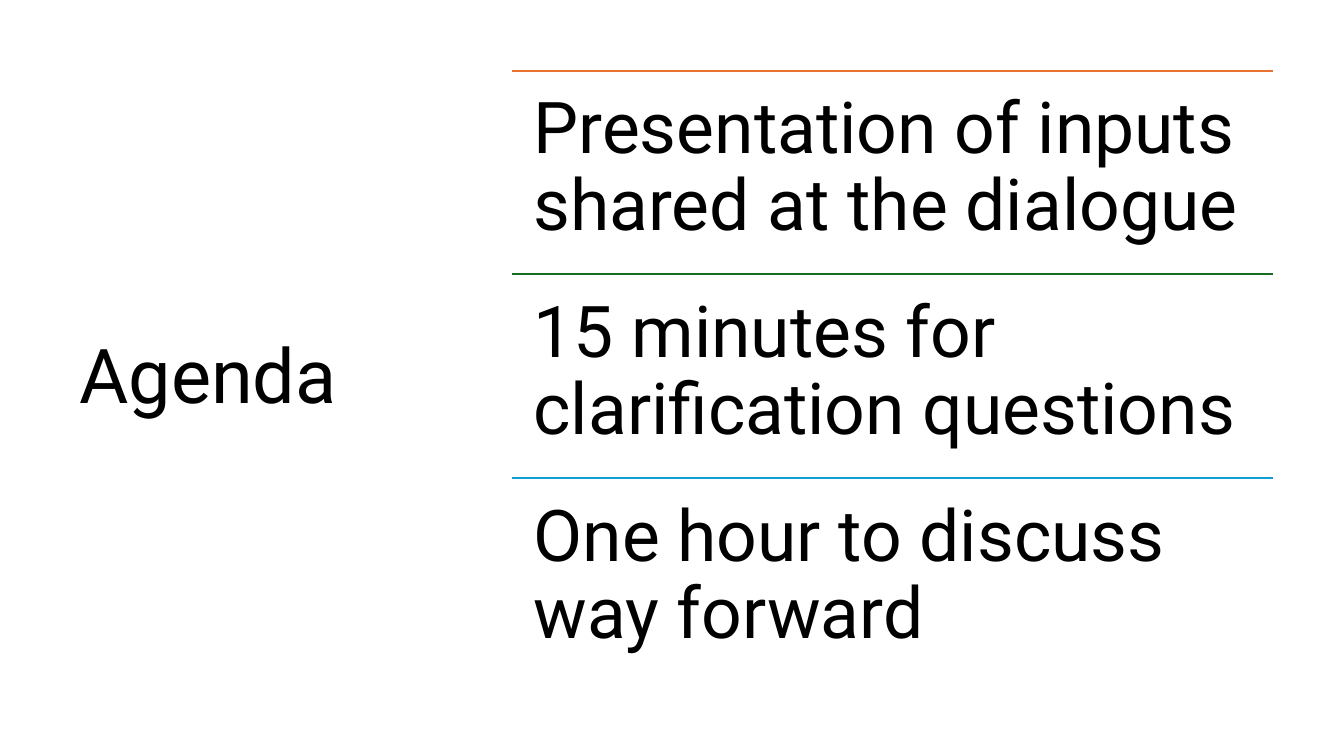
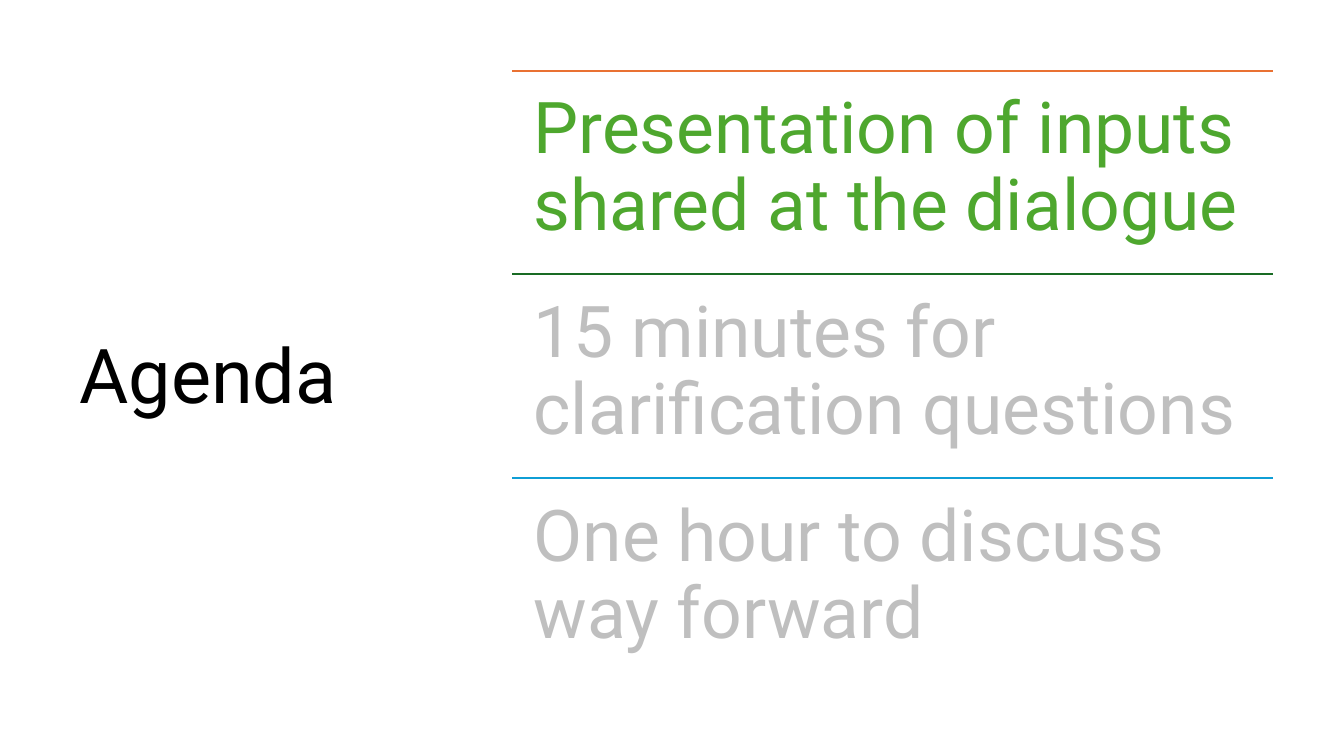
"""Builds two agenda slides: the full agenda, then its first item highlighted."""
from dataclasses import dataclass

from lxml.etree import SubElement
from pptx import Presentation
from pptx.dml.color import RGBColor
from pptx.enum.shapes import MSO_CONNECTOR as Connector
from pptx.enum.text import MSO_ANCHOR as Anchor
from pptx.oxml.ns import qn
from pptx.slide import Slide
from pptx.util import Pt

COLORS = {
    "text": "000000",
    "current": "4EA72E",
    "muted": "BFBFBF",
    "orange": "E97132",
    "green": "196B24",
    "blue": "0F9ED5",
}
FONT = "Roboto"
TOP = 50.4
AGENDA_LEFT, AGENDA_WIDTH = 365.8, 543.6
ROW_HEIGHT = 145.5


@dataclass(frozen=True)
class AgendaItem:
    wording: str
    rule_color: str


@dataclass(frozen=True)
class Area:
    left: float
    top: float
    width: float
    height: float


AGENDA = (
    AgendaItem("Presentation of inputs shared at the dialogue", "orange"),
    AgendaItem("15 minutes for clarification questions", "green"),
    AgendaItem("One hour to discuss way forward", "blue"),
)
HEADING_AREA = Area(49.7, TOP, 269.3, 439.9)
SLIDE_ITEM_COLORS = (
    ("text", "text", "text"),
    ("current", "muted", "muted"),
)


def add_text(slide: Slide, area: Area, wording: str, size: float, color: str,
             anchor: Anchor, inset_x: float, inset_y: float) -> None:
    box = slide.shapes.add_textbox(
        Pt(area.left), Pt(area.top), Pt(area.width), Pt(area.height))
    frame = box.text_frame
    frame.word_wrap = True
    frame.vertical_anchor = anchor
    frame.margin_left = frame.margin_right = Pt(inset_x)
    frame.margin_top = frame.margin_bottom = Pt(inset_y)
    paragraph = frame.paragraphs[0]
    paragraph.text = wording
    paragraph.line_spacing = 0.9
    paragraph.font.name = FONT
    paragraph.font.size = Pt(size)
    paragraph.font.color.rgb = RGBColor.from_string(COLORS[color])


def add_rule(slide: Slide, top: float, color: str) -> None:
    rule = slide.shapes.add_connector(
        Connector.STRAIGHT, Pt(AGENDA_LEFT), Pt(top),
        Pt(AGENDA_LEFT + AGENDA_WIDTH), Pt(top))
    rule.line.color.rgb = RGBColor.from_string(COLORS[color])
    rule.line.width = Pt(1.5)
    SubElement(rule.element.spPr, qn("a:effectLst"))


def add_agenda_slide(deck: Presentation, item_colors: tuple[str, ...]) -> None:
    slide = deck.slides.add_slide(deck.slide_layouts[6])
    add_text(slide, HEADING_AREA, "Agenda", 54, "text", Anchor.MIDDLE, 7.2, 3.6)
    for row, (item, color) in enumerate(zip(AGENDA, item_colors)):
        top = TOP + row * ROW_HEIGHT
        add_rule(slide, top, item.rule_color)
        area = Area(AGENDA_LEFT, top, AGENDA_WIDTH, ROW_HEIGHT)
        add_text(slide, area, item.wording, 51, color, Anchor.TOP, 15.3, 15.3)


def main() -> None:
    deck = Presentation()
    deck.slide_width, deck.slide_height = Pt(960), Pt(540)
    for item_colors in SLIDE_ITEM_COLORS:
        add_agenda_slide(deck, item_colors)
    deck.save("out.pptx")


if __name__ == "__main__":
    main()
